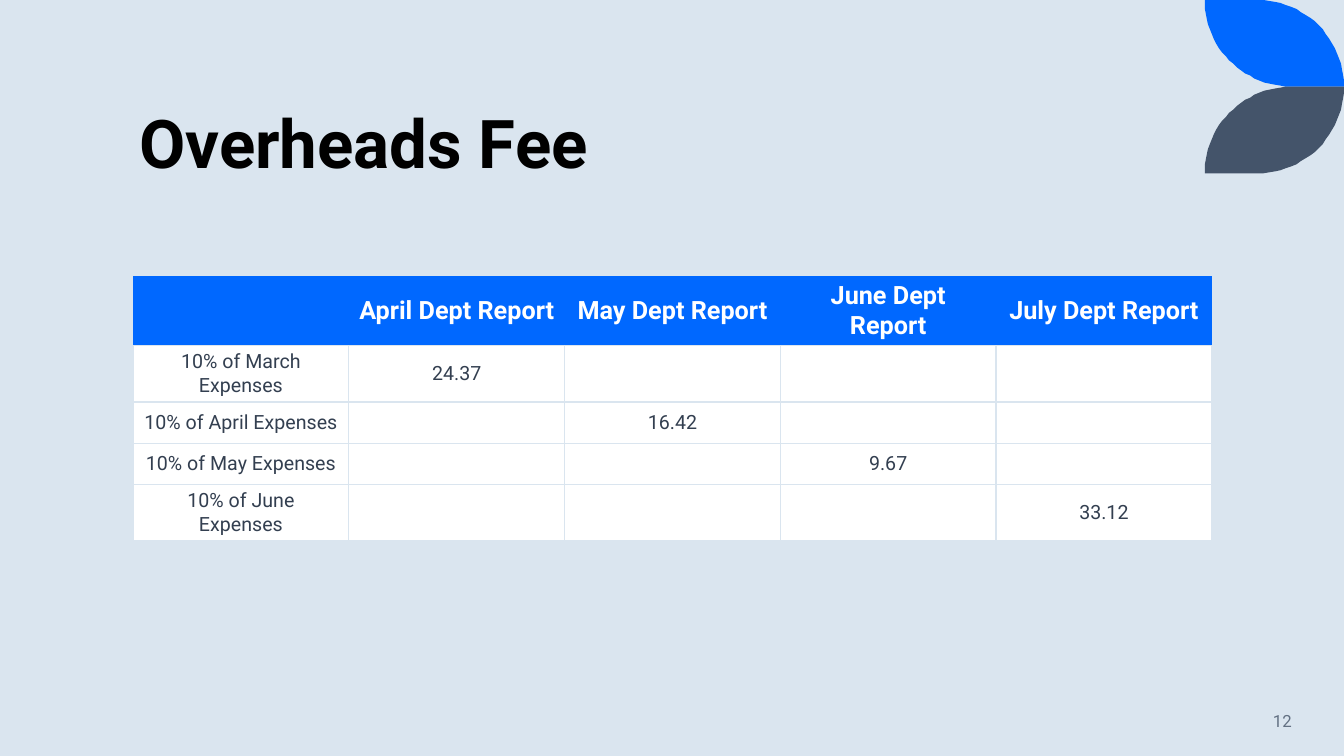
import lxml.etree
import pptx
import pptx.dml.color
import pptx.enum.text
import pptx.oxml.ns
import pptx.util

RGB = pptx.dml.color.RGBColor
ALIGN = pptx.enum.text.PP_ALIGN
ANCHOR = pptx.enum.text.MSO_ANCHOR

PX = 9144  # EMU in one px, at 100 px to the inch
FONT = "Roboto"
PALE = RGB(0xDA, 0xE5, 0xEF)
BLUE = RGB(0x00, 0x68, 0xFF)
SLATE = RGB(0x44, 0x54, 0x6A)
BLACK = RGB(0x00, 0x00, 0x00)
WHITE = RGB(0xFF, 0xFF, 0xFF)
INK = RGB(0x33, 0x3F, 0x50)
GREY = RGB(0x63, 0x71, 0x83)

ROWS = [
    ["", "April Dept Report", "May Dept Report", "June Dept Report", "July Dept Report"],
    ["10% of March Expenses", "24.37", "", "", ""],
    ["10% of April Expenses", "", "16.42", "", ""],
    ["10% of May Expenses", "", "", "9.67", ""],
    ["10% of June Expenses", "", "", "", "33.12"],
]


def scale(box):
    return [n * PX for n in box]


def write(para, text, size, color, bold=False, align=ALIGN.LEFT):
    para.alignment = align
    run = para.add_run()
    run.text = text
    font = run.font
    font.name, font.size, font.bold = FONT, pptx.util.Pt(size), bold
    font.color.rgb = color


def curve(a, b, c, d, steps=24):
    """Points along a cubic Bezier curve, without its start."""
    points = []
    for i in range(1, steps + 1):
        t = i / steps
        u = 1 - t
        points.append(tuple(
            u**3 * p + 3 * u * u * t * q + 3 * u * t * t * r + t**3 * s
            for p, q, r, s in zip(a, b, c, d)))
    return points


def add_leaf(slide, box, color, flip=False):
    left, top, wide, high = box

    def at(x, y):
        return (left + x * wide, top + (1 - y if flip else y) * high)

    start = at(0, 0)
    edge = [at(0.38, 0)]
    edge += curve(at(0.38, 0), at(0.72, 0), at(1, 0.45), at(1, 1))
    edge += [at(0.62, 1)]
    edge += curve(at(0.62, 1), at(0.3, 1), at(0.03, 0.6), at(0, 0.1))
    form = slide.shapes.build_freeform(*start, scale=PX)
    form.add_line_segments(edge, close=True)
    leaf = form.convert_to_shape()
    leaf.shadow.inherit = False
    leaf.fill.solid()
    leaf.fill.fore_color.rgb = color
    leaf.line.fill.background()


def set_title(slide, box, text):
    title = slide.shapes.title
    title.left, title.top, title.width, title.height = scale(box)
    frame = title.text_frame
    frame.vertical_anchor = ANCHOR.BOTTOM
    frame.word_wrap = True
    para = frame.paragraphs[0]
    para.line_spacing = 0.9
    write(para, text, 48, BLACK, bold=True)


def set_edges(cell, drawn):
    """Rule the named sides of a cell and clear the others."""
    props = cell._tc.get_or_add_tcPr()
    qn = pptx.oxml.ns.qn
    for side in ("lnL", "lnR", "lnT", "lnB"):
        line = lxml.etree.SubElement(props, qn("a:" + side), w=str(pptx.util.Pt(1)))
        if side in drawn:
            fill = lxml.etree.SubElement(line, qn("a:solidFill"))
            lxml.etree.SubElement(fill, qn("a:srgbClr"), val=str(PALE))
        else:
            lxml.etree.SubElement(line, qn("a:noFill"))


def add_fees(slide, box):
    table = slide.shapes.add_table(len(ROWS), len(ROWS[0]), *scale(box)).table
    table.horz_banding = False
    for r, row in enumerate(ROWS):
        head = r == 0
        for c, text in enumerate(row):
            cell = table.cell(r, c)
            set_edges(cell, ("lnB",) if head else ("lnL", "lnR", "lnT", "lnB"))
            cell.fill.solid()
            cell.fill.fore_color.rgb = BLUE if head else WHITE
            cell.vertical_anchor = ANCHOR.MIDDLE
            if text:
                write(cell.text_frame.paragraphs[0], text, 18 if head else 14,
                      WHITE if head else INK, head, ALIGN.CENTER)


def add_number(slide, box, text):
    frame = slide.shapes.add_textbox(*scale(box)).text_frame
    frame.word_wrap = True
    frame.vertical_anchor = ANCHOR.MIDDLE
    write(frame.paragraphs[0], text, 12, GREY, align=ALIGN.RIGHT)


def main():
    deck = pptx.Presentation()
    deck.slide_width, deck.slide_height = scale((1333, 750))
    slide = deck.slides.add_slide(deck.slide_layouts[5])
    slide.background.fill.solid()
    slide.background.fill.fore_color.rgb = PALE
    add_leaf(slide, (1195, 0, 138, 86), BLUE)
    add_leaf(slide, (1195, 86, 138, 86), SLATE, flip=True)
    set_title(slide, (128, 42, 1069, 145), "Overheads Fee")
    add_fees(slide, (132, 274, 1070, 205))
    add_number(slide, (1110, 695, 181, 40), "12")
    deck.save("out.pptx")


if __name__ == "__main__":
    main()
